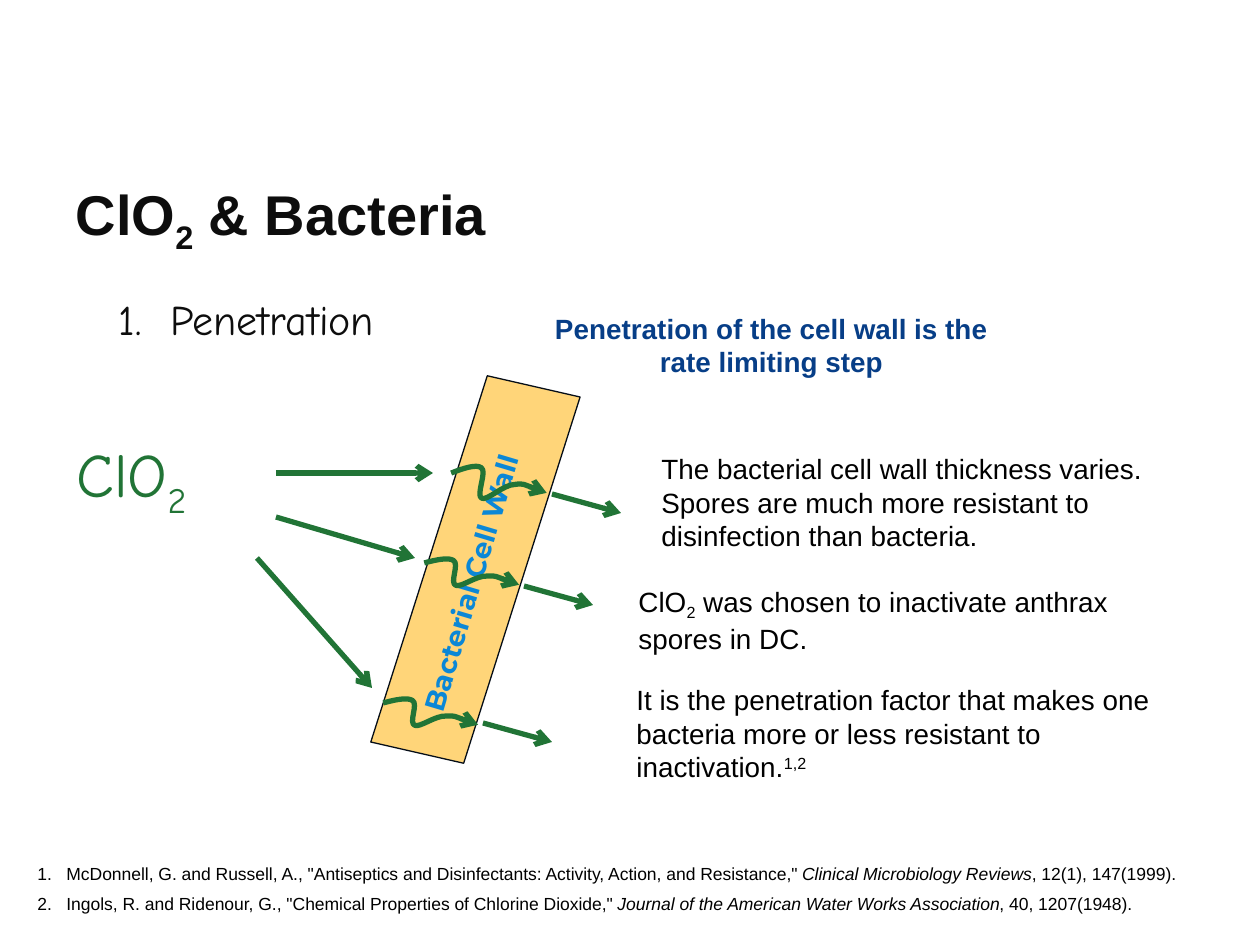
from lxml.etree import SubElement
from pptx import Presentation
from pptx.dml.color import RGBColor
from pptx.enum.shapes import MSO_CONNECTOR, MSO_SHAPE
from pptx.enum.text import MSO_ANCHOR, MSO_AUTO_SIZE, PP_ALIGN
from pptx.oxml.ns import qn
from pptx.util import Pt

EMU_PER_PX = 914400 / 126
INK = RGBColor(0x0D, 0x0D, 0x0D)
BLACK = RGBColor(0x00, 0x00, 0x00)
GREEN = RGBColor(0x21, 0x74, 0x36)
SAND = RGBColor(0xFF, 0xD5, 0x79)
OUTLINE = RGBColor(0x05, 0x0D, 0x17)
SKY = RGBColor(0x0B, 0x87, 0xD6)
NAVY = RGBColor(0x07, 0x3E, 0x87)

SUB = {"baseline": -25}
SUPER = {"baseline": 30}
ITALIC = {"italic": True}
TITLE = {"name": "Arial", "size": 32, "bold": True, "color": INK}
HEADING = {"name": "Comic Neue", "size": 24, "color": INK}
FORMULA = {"name": "Comic Neue", "size": 35.3, "color": GREEN}
WALL_LABEL = {"name": "Montserrat", "size": 15.9, "bold": True, "color": SKY}
CALLOUT = {"name": "Arial", "size": 15.9, "bold": True, "color": NAVY}
COMMENT = {"name": "Arial", "size": 15.9, "color": BLACK}
REFERENCE = {"name": "Arial", "size": 10, "color": BLACK}

WAVE = [(0, 51), (11, 21), (22, -5), (28, 2), (35, 9), (31, 100), (38, 102),
        (44, 105), (55, 34), (66, 22), (75, 7), (100, 16), (100, 16)]


def px(length):
    """Turn pixels into EMU."""
    return round(length * EMU_PER_PX)


class SlideBuilder:
    """Hold the page and the arrow style, and add each kind of element."""

    def __init__(self, page, arrow_color, arrow_width):
        self.page = page
        self.shapes = page.shapes
        self.arrow_color = arrow_color
        self.arrow_width = arrow_width

    def fill_text(self, frame, paragraphs, style, align=PP_ALIGN.LEFT, after=0, hang=0):
        """Fill a text frame with paragraphs of (text, format) spans."""
        for index, spans in enumerate(paragraphs):
            para = frame.paragraphs[0] if index == 0 else frame.add_paragraph()
            para.alignment = align
            para.space_before = Pt(0)
            para.space_after = Pt(after)
            if hang:
                properties = para._p.get_or_add_pPr()
                properties.set("marL", str(px(hang)))
                properties.set("indent", str(-px(hang)))
            for text, extra in spans:
                span = para.add_run()
                span.text = text
                self.style_span(span, {**style, **extra})

    def style_span(self, span, values):
        """Apply a dict of format values to a run."""
        for key, value in values.items():
            if key == "color":
                span.font.color.rgb = value
            elif key == "baseline":
                span._r.get_or_add_rPr().set("baseline", str(value * 1000))
            else:
                setattr(span.font, key, Pt(value) if key == "size" else value)

    def title(self, bounds, spans):
        """Place and fill the title placeholder."""
        box = self.shapes.title
        box.left, box.top, box.width, box.height = map(px, bounds)
        box.text_frame.vertical_anchor = MSO_ANCHOR.MIDDLE
        self.fill_text(box.text_frame, [spans], TITLE)

    def text(self, bounds, paragraphs, style, wrap=True, rotation=0, **layout):
        """Add a text box."""
        box = self.shapes.add_textbox(*map(px, bounds))
        box.rotation = rotation
        box.text_frame.word_wrap = wrap
        box.text_frame.auto_size = MSO_AUTO_SIZE.SHAPE_TO_FIT_TEXT
        self.fill_text(box.text_frame, paragraphs, style, **layout)

    def wall(self, bounds, rotation):
        """Add the slanted cell wall."""
        shape = self.shapes.add_shape(MSO_SHAPE.PARALLELOGRAM, *map(px, bounds))
        shape.rotation = rotation
        shape.shadow.inherit = False
        shape.fill.solid()
        shape.fill.fore_color.rgb = SAND
        shape.line.color.rgb = OUTLINE
        shape.line.width = Pt(0.75)

    def arrow_line(self, shape):
        """Style a line and give it an arrowhead."""
        shape.line.color.rgb = self.arrow_color
        shape.line.width = Pt(self.arrow_width)
        SubElement(shape.line._get_or_add_ln(), qn("a:tailEnd"), type="arrow")

    def arrow(self, start, end):
        """Add a straight arrow."""
        line = self.shapes.add_connector(MSO_CONNECTOR.STRAIGHT, *map(px, start + end))
        self.arrow_line(line)
        SubElement(line._element.spPr, qn("a:effectLst"))

    def wave(self, bounds, rotation):
        """Add a curved arrow whose points are percentages of its bounds."""
        left, top, width, height = map(px, bounds)
        builder = self.shapes.build_freeform(0, 0, scale=(width / 100, height / 100))
        builder.add_line_segments([(100, 100)], close=False)
        shape = builder.convert_to_shape(left, top)
        shape.rotation = rotation
        shape.shadow.inherit = False
        shape.fill.background()
        self.arrow_line(shape)
        outline = next(shape._element.iter(qn("a:path")))
        for step in list(outline):
            outline.remove(step)
        for first in (0, *range(1, len(WAVE), 3)):
            tag, count = ("a:cubicBezTo", 3) if first else ("a:moveTo", 1)
            step = SubElement(outline, qn(tag))
            for x, y in WAVE[first:first + count]:
                SubElement(step, qn("a:pt"), x=str(x), y=str(y))


def main():
    """Build the slide and save it."""
    deck = Presentation()
    deck.slide_width, deck.slide_height = px(1260), px(945)
    builder = SlideBuilder(deck.slides.add_slide(deck.slide_layouts[5]), GREEN, 3)

    builder.title((63, 169, 1134, 98), [("ClO", {}), ("2", SUB), (" & Bacteria", {})])
    builder.text((106, 287, 309, 63), [[("1.\tPenetration", {})]], HEADING,
                 wrap=False, hang=52)
    builder.text((64, 430, 155, 88), [[("ClO", {}), ("2", SUB)]], FORMULA, wrap=False)
    builder.wall((412, 378, 127, 383), 12.9)
    builder.text((319, 551, 309, 47), [[("Bacterial Cell Wall", {})]], WALL_LABEL,
                 wrap=False, rotation=286.6)

    for start, end in [((276, 473), (433, 473)), ((276, 517), (415, 558)),
                       ((257, 558), (372, 688))]:
        builder.arrow(start, end)
    for left, top, height in [(449, 473, 29), (422, 566, 23), (381, 706, 23)]:
        builder.wave((left, top, 97, height), 17.7)
    for x, y in [(552, 494), (524, 586), (483, 723)]:
        builder.arrow((x, y), (x + 69, y + 19))

    comments = [
        ((649, 446, 537, 113), [("The bacterial cell wall thickness varies. Spores are much "
                                 "more resistant to disinfection than bacteria.", {})]),
        ((624, 677, 593, 113), [("It is the penetration factor that makes one bacteria more "
                                 "or less resistant to inactivation.", {}), ("1,2", SUPER)]),
        ((626, 578, 537, 81), [("ClO", {}), ("2", SUB),
                               (" was chosen to inactivate anthrax spores in DC.", {})]),
    ]
    for bounds, spans in comments:
        builder.text(bounds, [spans], COMMENT, after=5.3)

    references = [
        [("1.\tMcDonnell, G. and Russell, A., \"Antiseptics and Disinfectants: "
          "Activity, Action, and Resistance,\" ", {}),
         ("Clinical Microbiology Reviews", ITALIC), (", 12(1), 147(1999).", {})],
        [("2.\tIngols, R. and Ridenour, G., \"Chemical Properties of Chlorine Dioxide,\" ", {}),
         ("Journal of the American Water Works Association", ITALIC),
         (", 40, 1207(1948).", {})],
    ]
    builder.text((25, 857, 1216, 64), references, REFERENCE, after=5.3, hang=29)
    builder.text((520, 305, 503, 81),
                 [[("Penetration of the cell wall is the rate limiting step", {})]],
                 CALLOUT, align=PP_ALIGN.CENTER)
    deck.save("out.pptx")


if __name__ == "__main__":
    main()
